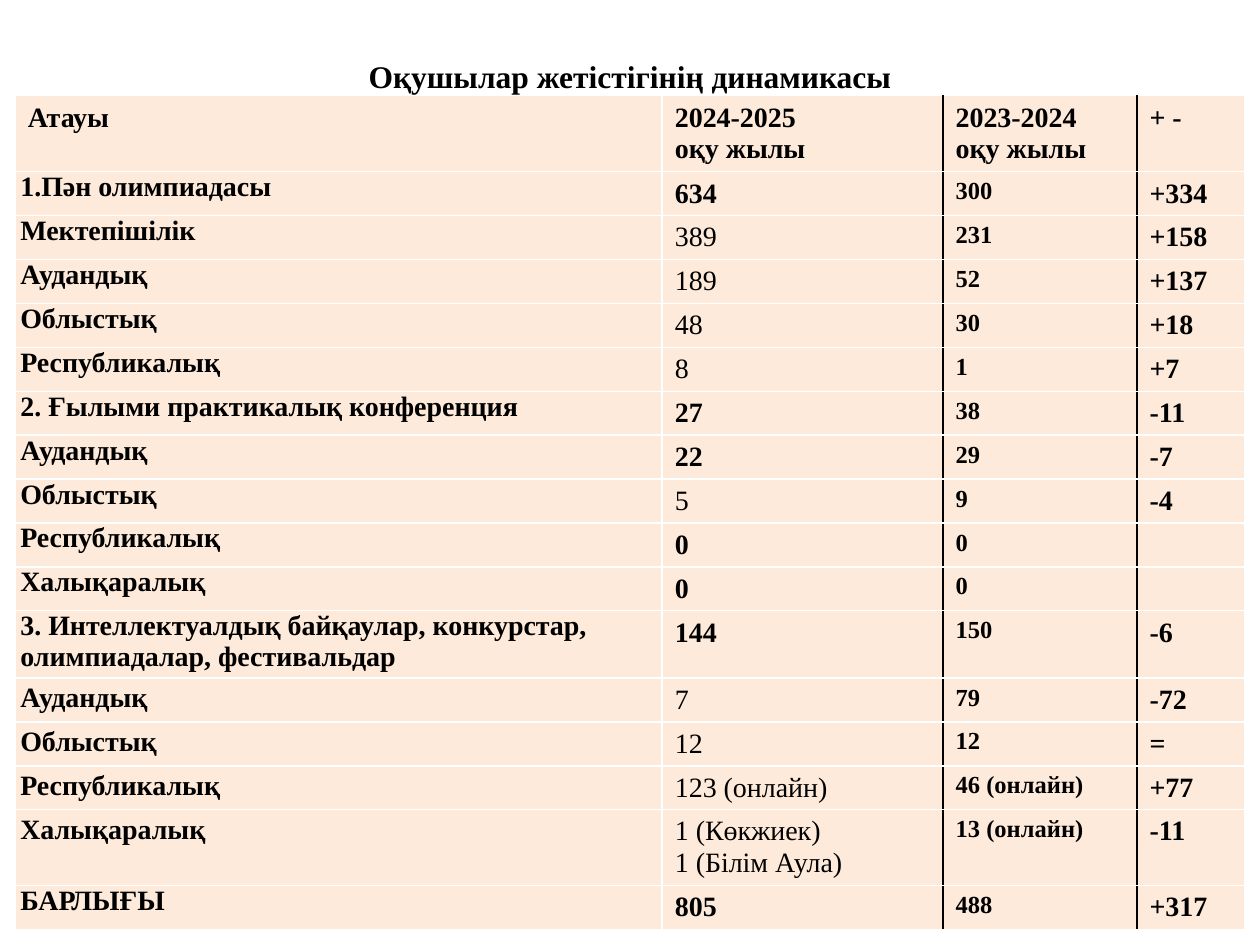
from lxml import etree
from pptx import Presentation
from pptx.dml.color import RGBColor
from pptx.enum.text import MSO_ANCHOR, PP_ALIGN
from pptx.oxml.ns import qn
from pptx.util import Cm, Pt

LEFT, CENTER, JUSTIFY = PP_ALIGN.LEFT, PP_ALIGN.CENTER, PP_ALIGN.JUSTIFY
MIDDLE = MSO_ANCHOR.MIDDLE
BLACK = RGBColor(0x00, 0x00, 0x00)
PEACH = RGBColor(0xFD, 0xEA, 0xDA)
FONT = "Times New Roman"

TITLE = "Оқушылар жетістігінің динамикасы"
HEADER = ("Атауы", "2024-2025\nоқу жылы", "2023-2024 оқу жылы", "+ -")
OLYMPIADS = [
    ("1.Пән олимпиадасы", "634", "300", "+334"),
    ("Мектепішілік", "389", "231", "+158"),
    ("Аудандық", "189", "52", "+137"),
    ("Облыстық", "48", "30", "+18"),
    ("Республикалық", "8", "1", "+7"),
]
CONFERENCES = [
    ("2. Ғылыми практикалық конференция", "27", "38", "-11"),
    ("Аудандық", "22", "29", "-7"),
    ("Облыстық", "5", "9", "-4"),
    ("Республикалық", "0", "0", ""),
    ("Халықаралық", "0", "0", ""),
]
CONTESTS = [
    ("3. Интеллектуалдық байқаулар, конкурстар, олимпиадалар, фестивальдар",
     "144", "150", "-6"),
    ("Аудандық", "7", "79", "-72"),
    ("Облыстық", "12", "12", "="),
    ("Республикалық", "123 (онлайн)", "46 (онлайн)", "+77"),
    ("Халықаралық", "1 (Көкжиек)\n1 (Білім Аула)", "13 (онлайн)", "-11"),
]
TOTAL = ("БАРЛЫҒЫ", "805", "488", "+317")
ROWS = [HEADER, *OLYMPIADS, *CONFERENCES, *CONTESTS, TOTAL]

SECTIONS = (OLYMPIADS[0], CONFERENCES[0], CONTESTS[0])
LOOSE_ROWS = CONTESTS[1:]
REGULAR_ROWS = OLYMPIADS[1:] + CONFERENCES[2:3] + CONTESTS[1:]

COLUMN_WIDTHS = (13.04, 5.66, 3.91, 2.18)
TALL_ROWS = {HEADER: 1.51, CONTESTS[0]: 1.28, CONTESTS[-1]: 1.51}
ROW_HEIGHT = 12.4 / (len(ROWS) - len(TALL_ROWS))
NAME, CURRENT, PREVIOUS, CHANGE = range(4)


def write(frame, text, size=16, bold=True, align=LEFT, spacing=None):
    """Fill the frame, one paragraph for each line of text."""
    frame.word_wrap = True
    for number, line in enumerate(text.split("\n")):
        paragraph = frame.add_paragraph() if number else frame.paragraphs[0]
        paragraph.alignment = align
        if spacing:
            paragraph.line_spacing = spacing
        if not line:
            # An empty cell needs its own size to keep the row height.
            etree.SubElement(paragraph._p, qn("a:endParaRPr"), sz=str(size * 100))
            continue
        run = paragraph.add_run()
        run.text = line
        run.font.name = FONT
        run.font.size = Pt(size)
        run.font.bold = bold
        run.font.color.rgb = BLACK


def add_black_border(cell, side):
    line = etree.SubElement(cell._tc.get_or_add_tcPr(), qn(f"a:ln{side}"),
                            w=str(Pt(1)))
    fill = etree.SubElement(line, qn("a:solidFill"))
    etree.SubElement(fill, qn("a:srgbClr"), val=str(BLACK))


def style_cell(cell, column, is_header):
    """Colour the cell; its white borders come from the table style."""
    if column in (PREVIOUS, CHANGE):
        add_black_border(cell, "L")
    if column in (CURRENT, PREVIOUS):
        add_black_border(cell, "R")
    cell.fill.solid()
    cell.fill.fore_color.rgb = PEACH
    cell.margin_bottom = Cm(0.05)
    if column == NAME and not is_header:
        cell.margin_left = cell.margin_right = Cm(0.1)
        cell.margin_top = cell.margin_bottom = 0


def text_format(row, column):
    if row == HEADER:
        return {}
    if column == NAME:
        if row in LOOSE_ROWS:
            return {"spacing": 1.15}
        return {"align": LEFT if row in SECTIONS else JUSTIFY}
    if column == CURRENT:
        return {"bold": row not in REGULAR_ROWS}
    return {"size": 14 if column == PREVIOUS else 16}


def add_results(slide):
    heights = [TALL_ROWS.get(row, ROW_HEIGHT) for row in ROWS]
    table = slide.shapes.add_table(
        len(ROWS), len(HEADER), Cm(0.31), Cm(1.93),
        Cm(sum(COLUMN_WIDTHS)), Cm(sum(heights))).table
    table.first_row = table.horz_banding = False
    for column, width in zip(table.columns, COLUMN_WIDTHS):
        column.width = Cm(width)
    for r, (row, height) in enumerate(zip(ROWS, heights)):
        table.rows[r].height = Cm(height)
        for c, text in enumerate(row):
            cell = table.cell(r, c)
            style_cell(cell, c, row == HEADER)
            write(cell.text_frame, text, **text_format(row, c))


def main():
    deck = Presentation()
    deck.slide_width, deck.slide_height = Cm(25.4), Cm(19.05)
    slide = deck.slides.add_slide(deck.slide_layouts[6])
    title = slide.shapes.add_textbox(Cm(1.27), Cm(0.53), Cm(22.86), Cm(2))
    title.text_frame.vertical_anchor = MIDDLE
    write(title.text_frame, TITLE, size=18, align=CENTER)
    add_results(slide)
    deck.save("out.pptx")


if __name__ == "__main__":
    main()
